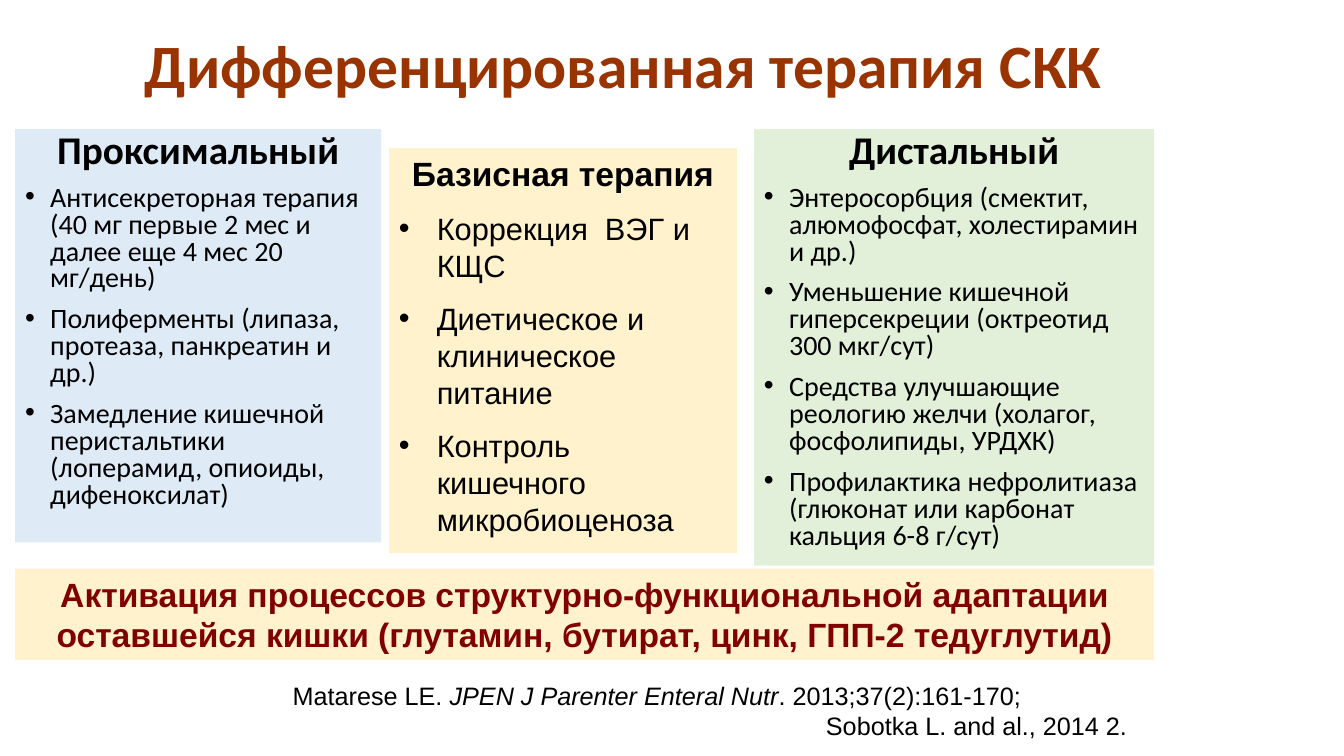
from dataclasses import dataclass

from lxml import etree
from pptx import Presentation
from pptx.dml.color import RGBColor
from pptx.enum.shapes import MSO_SHAPE
from pptx.enum.text import MSO_ANCHOR, PP_ALIGN
from pptx.oxml.ns import qn
from pptx.util import Pt

RECTANGLE = MSO_SHAPE.RECTANGLE
TOP, MIDDLE = MSO_ANCHOR.TOP, MSO_ANCHOR.MIDDLE
LEFT, CENTER, RIGHT = PP_ALIGN.LEFT, PP_ALIGN.CENTER, PP_ALIGN.RIGHT


@dataclass(frozen=True)
class Theme:
    title: str = "993300"
    text: str = "000000"
    accent: str = "800000"
    blue: str = "DEEBF7"
    green: str = "E2F0D9"
    cream: str = "FFF2CC"
    title_size: int = 44
    banner_size: int = 24
    source_size: int = 18


@dataclass(frozen=True)
class ColumnStyle:
    font: str
    heading_size: int
    item_size: int
    indent: float
    space_before: float
    line_spacing: float


THEME = Theme()
SIDE_COLUMN = ColumnStyle("Calibri", 28, 20, 18, 10, 0.8)
BASE_COLUMN = ColumnStyle("Arial", 24, 22, 27, 11.5, 1.0)

COLUMNS = [
    ((10.8, 92.2, 261.4, 295.2), THEME.blue, SIDE_COLUMN, "Проксимальный", [
        "Антисекреторная терапия (40 мг первые 2 мес и далее еще 4 мес 20 мг/день)",
        "Полиферменты (липаза, протеаза, панкреатин и др.)",
        "Замедление кишечной перистальтики (лоперамид, опиоиды, дифеноксилат)",
    ]),
    ((538.6, 92.2, 285.8, 311.8), THEME.green, SIDE_COLUMN, "Дистальный", [
        "Энтеросорбция (смектит, алюмофосфат, холестирамин и др.)",
        "Уменьшение кишечной гиперсекреции (октреотид 300 мкг/сут)",
        "Средства улучшающие реологию желчи (холагог, фосфолипиды, УРДХК)",
        "Профилактика нефролитиаза (глюконат или карбонат кальция 6-8 г/сут)",
    ]),
    ((277.9, 105.8, 248.4, 289.4), THEME.cream, BASE_COLUMN, "Базисная терапия", [
        "Коррекция  ВЭГ и КЩС",
        "Диетическое и клиническое питание",
        "Контроль кишечного микробиоценоза",
    ]),
]


def prepare_frame(shape, anchor):
    frame = shape.text_frame
    frame.word_wrap = True
    frame.vertical_anchor = anchor
    return frame


def add_panel(slide, box, fill):
    """Add a borderless filled rectangle and return its text frame."""
    shape = slide.shapes.add_shape(RECTANGLE, *map(Pt, box))
    shape.shadow.inherit = False
    shape.fill.solid()
    shape.fill.fore_color.rgb = RGBColor.from_string(fill)
    shape.line.fill.background()
    return prepare_frame(shape, TOP)


def add_text_box(slide, box, anchor=TOP):
    return prepare_frame(slide.shapes.add_textbox(*map(Pt, box)), anchor)


def next_paragraph(frame, alignment, line_spacing=1.0, space_before=0):
    first = frame.paragraphs[0]
    paragraph = frame.add_paragraph() if first.runs else first
    paragraph.alignment = alignment
    paragraph.line_spacing = line_spacing
    paragraph.space_before = Pt(space_before)
    return paragraph


def add_run(paragraph, text, font, size, color=THEME.text, bold=False, italic=False):
    run = paragraph.add_run()
    run.text = text
    run.font.name = font
    run.font.size = Pt(size)
    run.font.bold = bold
    run.font.italic = italic
    run.font.color.rgb = RGBColor.from_string(color)


def set_bullet(paragraph, indent):
    properties = paragraph._p.get_or_add_pPr()
    properties.set("marL", str(Pt(indent)))
    properties.set("indent", str(-Pt(indent)))
    etree.SubElement(properties, qn("a:buFont")).set("typeface", "Arial")
    etree.SubElement(properties, qn("a:buChar")).set("char", "•")


def add_column(slide, box, fill, style, heading, items):
    frame = add_panel(slide, box, fill)
    spacing = style.line_spacing, style.space_before
    paragraph = next_paragraph(frame, CENTER, *spacing)
    add_run(paragraph, heading, style.font, style.heading_size, bold=True)
    for item in items:
        paragraph = next_paragraph(frame, LEFT, *spacing)
        set_bullet(paragraph, style.indent)
        add_run(paragraph, item, style.font, style.item_size)


def add_title(slide):
    frame = add_text_box(slide, (31.7, -3.6, 828, 104.4), MIDDLE)
    paragraph = next_paragraph(frame, CENTER, 0.9)
    add_run(paragraph, "Дифференцированная терапия СКК", "Calibri",
            THEME.title_size, THEME.title, bold=True)


def add_banner(slide):
    frame = add_panel(slide, (10.8, 406.1, 813.6, 65.5), THEME.cream)
    paragraph = next_paragraph(frame, CENTER)
    add_run(paragraph, "Активация процессов структурно-функциональной адаптации "
            "оставшейся кишки (глутамин, бутират, цинк, ГПП-2 тедуглутид)",
            "Arial", THEME.banner_size, THEME.accent, bold=True)


def add_sources(slide):
    frame = add_text_box(slide, (202, 482.4, 615.2, 50.4))
    paragraph = next_paragraph(frame, LEFT)
    for text, italic in [("Matarese LE. ", False),
                         ("JPEN J Parenter Enteral Nutr", True),
                         (". 2013;37(2):161-170;", False)]:
        add_run(paragraph, text, "Arial", THEME.source_size, italic=italic)
    paragraph = next_paragraph(frame, RIGHT)
    add_run(paragraph, "Sobotka L. and al., 2014 2. ", "Arial", THEME.source_size)


def main():
    presentation = Presentation()
    presentation.slide_width = Pt(960)
    presentation.slide_height = Pt(540)
    slide = presentation.slides.add_slide(presentation.slide_layouts[6])
    add_title(slide)
    for column in COLUMNS:
        add_column(slide, *column)
    add_banner(slide)
    add_sources(slide)
    presentation.save("out.pptx")


if __name__ == "__main__":
    main()
